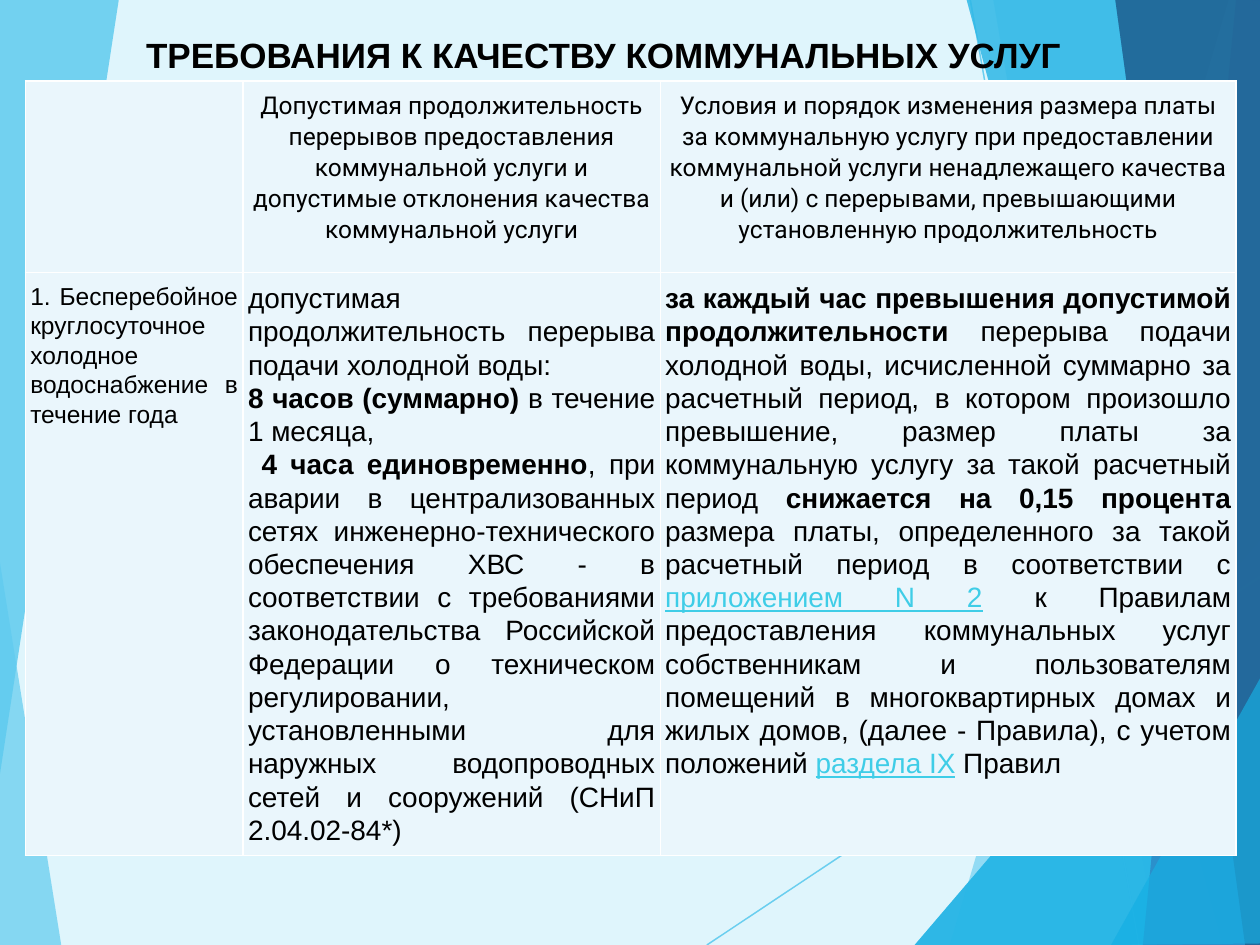
from dataclasses import dataclass
from typing import NamedTuple

from lxml.etree import SubElement as Sub
from pptx import Presentation as Deck
from pptx.dml.color import RGBColor as Rgb
from pptx.enum.shapes import MSO_CONNECTOR as Conn
from pptx.enum.text import MSO_ANCHOR as Anchor, MSO_AUTO_SIZE as Fit, PP_ALIGN as Align
from pptx.oxml.ns import qn
from pptx.util import Cm, Pt

HUES = {
    "back": "DFF5FC", "sky": "5FCBEF", "aqua": "17B0E4", "blue": "2E83C3",
    "navy": "226292", "cell": "EAF6FC", "white": "FFFFFF", "text": "000000",
    "link": "3FCDE7",
}
BOLD = {"bold": True}
LINK = {"underline": True}


class Run(NamedTuple):
    text: str
    style: dict = {}


@dataclass
class Facet:
    hue: str
    alpha: int
    points: list


@dataclass
class Ray:
    start: tuple
    end: tuple


@dataclass
class Entry:
    paras: list
    size: int
    face: str = "Arial"
    align: Align = Align.JUSTIFY


RAYS = [Ray((14.25, 19.05), (25.43, 11.61)), Ray((19.56, 0), (22.96, 19.05))]
RIGHT = [
    Facet("sky", 36, [(24.77, 0), (19.15, 19.05), (25.45, 19.08), (25.43, 0.03)]),
    Facet("sky", 20, [(20.02, -0.03), (23.34, 19.05), (25.43, 19.05), (25.43, -0.03)]),
    Facet("aqua", 66, [(18.44, 19.05), (25.4, 10.9), (25.43, 19.05)]),
    Facet("aqua", 50, [(19.48, -0.03), (24.64, 19.05), (25.43, 19.02), (25.43, -0.03)]),
    Facet("blue", 70, [(24.92, -0.03), (23.04, 19.05), (25.43, 19.05), (25.4, -0.03)]),
    Facet("navy", 82, [(22.48, -0.03), (25.1, 19.05), (25.45, 19.05), (25.4, -0.03)]),
    Facet("aqua", 66, [(22.4, 19.05), (25.45, 13.59), (25.45, 19.02)]),
]
LOW = Facet("sky", 70, [(-0.03, 11.15), (1.24, 19.08), (-0.03, 19.05)])
HIGH = Facet("sky", 85, [(-0.03, 0), (2.39, -0.03), (2.39, 0.03), (-0.03, 15.8)])

WIDTHS = [4.39, 8.41, 11.61]
HEIGHTS = [3.86, 11.76]
ROWS = [
    [
        None,
        Entry([[Run("Допустимая продолжительность перерывов предоставления коммунальной "
                    "услуги и допустимые отклонения качества коммунальной услуги")]],
              14, "Roboto", Align.CENTER),
        Entry([[Run("Условия и порядок изменения размера платы за коммунальную услугу при "
                    "предоставлении коммунальной услуги ненадлежащего качества и (или) с "
                    "перерывами, превышающими установленную продолжительность")]],
              14, "Roboto", Align.CENTER),
    ],
    [
        Entry([[Run("1. Бесперебойное круглосуточное холодное водоснабжение в течение года")]], 14),
        Entry([
            [Run("допустимая продолжительность перерыва подачи холодной воды:")],
            [Run("8 часов (суммарно) ", BOLD), Run("в течение 1 месяца,")],
            [Run(" "), Run("4 часа единовременно", BOLD),
             Run(", при аварии в централизованных сетях инженерно-технического обеспечения "
                 "ХВС - в соответствии с требованиями законодательства Российской Федерации "
                 "о техническом регулировании, установленными для наружных водопроводных "
                 "сетей и сооружений (СНиП 2.04.02-84*)")],
        ], 16),
        Entry([[
            Run("за каждый час превышения допустимой продолжительности ", BOLD),
            Run("перерыва подачи холодной воды, исчисленной суммарно за расчетный период, "
                "в котором произошло превышение, размер платы за коммунальную услугу за "
                "такой расчетный период "),
            Run("снижается на 0,15 процента ", BOLD),
            Run("размера платы, определенного за такой расчетный период в соответствии с "),
            Run("приложением N 2", LINK),
            Run(" к Правилам предоставления коммунальных услуг собственникам и "
                "пользователям помещений в многоквартирных домах и жилых домов, "
                "(далее - Правила), с учетом положений "),
            Run("раздела IX", LINK),
            Run(" Правил"),
        ]], 16),
    ],
]


def tint(name: str) -> Rgb:
    return Rgb.from_string(HUES[name])


def apply(target, values: dict) -> None:
    for name, value in values.items():
        setattr(target, name, value)


def fade(fill, alpha: int) -> None:
    Sub(fill.find(".//" + qn("a:srgbClr")), qn("a:alpha"), val=str(alpha * 1000))


def draw_facet(shapes, facet: Facet) -> None:
    first, *rest = [(Cm(x), Cm(y)) for x, y in facet.points]
    pen = shapes.build_freeform(*first, scale=1.0)
    pen.add_line_segments(rest, close=True)
    shape = pen.convert_to_shape()
    shape.shadow.inherit = False
    shape.fill.solid()
    shape.fill.fore_color.rgb = tint(facet.hue)
    fade(shape.element.spPr.find(qn("a:solidFill")), facet.alpha)
    shape.line.fill.background()


def draw_ray(shapes, ray: Ray) -> None:
    ends = [Cm(n) for n in ray.start + ray.end]
    link = shapes.add_connector(Conn.STRAIGHT, *ends)
    link.line.width = Pt(0.75)
    link.line.color.rgb = tint("sky")
    props = link.element.spPr
    fade(props.find(qn("a:ln")), 70)
    Sub(props, qn("a:effectLst"))


def write(para, run: Run, size: int, face: str) -> None:
    part = para.add_run()
    part.text = run.text
    apply(part.font, {"size": Pt(size), "name": face, "bold": False, **run.style})
    part.font.color.rgb = tint("link" if run.style is LINK else "text")


def edge(cell) -> None:
    props = cell._tc.get_or_add_tcPr()
    for side in ("a:lnL", "a:lnR", "a:lnT", "a:lnB"):
        line = Sub(props, qn(side), w=str(Pt(1)))
        Sub(Sub(line, qn("a:solidFill")), qn("a:srgbClr"), val=HUES["white"])


def fill_cell(cell, entry: Entry | None) -> None:
    edge(cell)
    cell.fill.solid()
    cell.fill.fore_color.rgb = tint("cell")
    apply(cell, {"margin_left": Cm(0.1), "margin_right": Cm(0.1),
                 "margin_top": Cm(0.18), "margin_bottom": Cm(0.18)})
    if entry is None:
        return
    frame = cell.text_frame
    for i, runs in enumerate(entry.paras):
        para = frame.add_paragraph() if i else frame.paragraphs[0]
        apply(para, {"alignment": entry.align, "line_spacing": 1.07})
        for run in runs:
            write(para, run, entry.size, entry.face)


def draw_table(shapes) -> None:
    box = [Cm(n) for n in (0.51, 1.63, sum(WIDTHS), sum(HEIGHTS))]
    table = shapes.add_table(len(HEIGHTS), len(WIDTHS), *box).table
    apply(table, {"first_row": False, "horz_banding": False})
    for col, width in zip(table.columns, WIDTHS):
        col.width = Cm(width)
    for row, height, items in zip(table.rows, HEIGHTS, ROWS):
        row.height = Cm(height)
        for cell, entry in zip(row.cells, items):
            fill_cell(cell, entry)


def draw_title(shapes) -> None:
    title = shapes.title
    apply(title, {"left": Cm(2.69), "top": Cm(0.53), "width": Cm(19.13), "height": Cm(1.12)})
    frame = title.text_frame
    apply(frame, {"word_wrap": False, "auto_size": Fit.SHAPE_TO_FIT_TEXT,
                  "vertical_anchor": Anchor.MIDDLE})
    para = frame.paragraphs[0]
    para.alignment = Align.LEFT
    write(para, Run("ТРЕБОВАНИЯ К КАЧЕСТВУ КОММУНАЛЬНЫХ УСЛУГ", BOLD), 20, "Arial")
    shapes.element.append(title.element)


def main() -> None:
    deck = Deck()
    apply(deck, {"slide_width": Cm(25.4), "slide_height": Cm(19.05)})
    slide = deck.slides.add_slide(deck.slide_layouts[5])
    back = slide.background.fill
    back.solid()
    back.fore_color.rgb = tint("back")
    shapes = slide.shapes
    draw_facet(shapes, LOW)
    for _ in range(2):
        for ray in RAYS:
            draw_ray(shapes, ray)
        for facet in RIGHT:
            draw_facet(shapes, facet)
    draw_facet(shapes, HIGH)
    draw_table(shapes)
    draw_title(shapes)
    deck.save("out.pptx")


if __name__ == "__main__":
    main()
